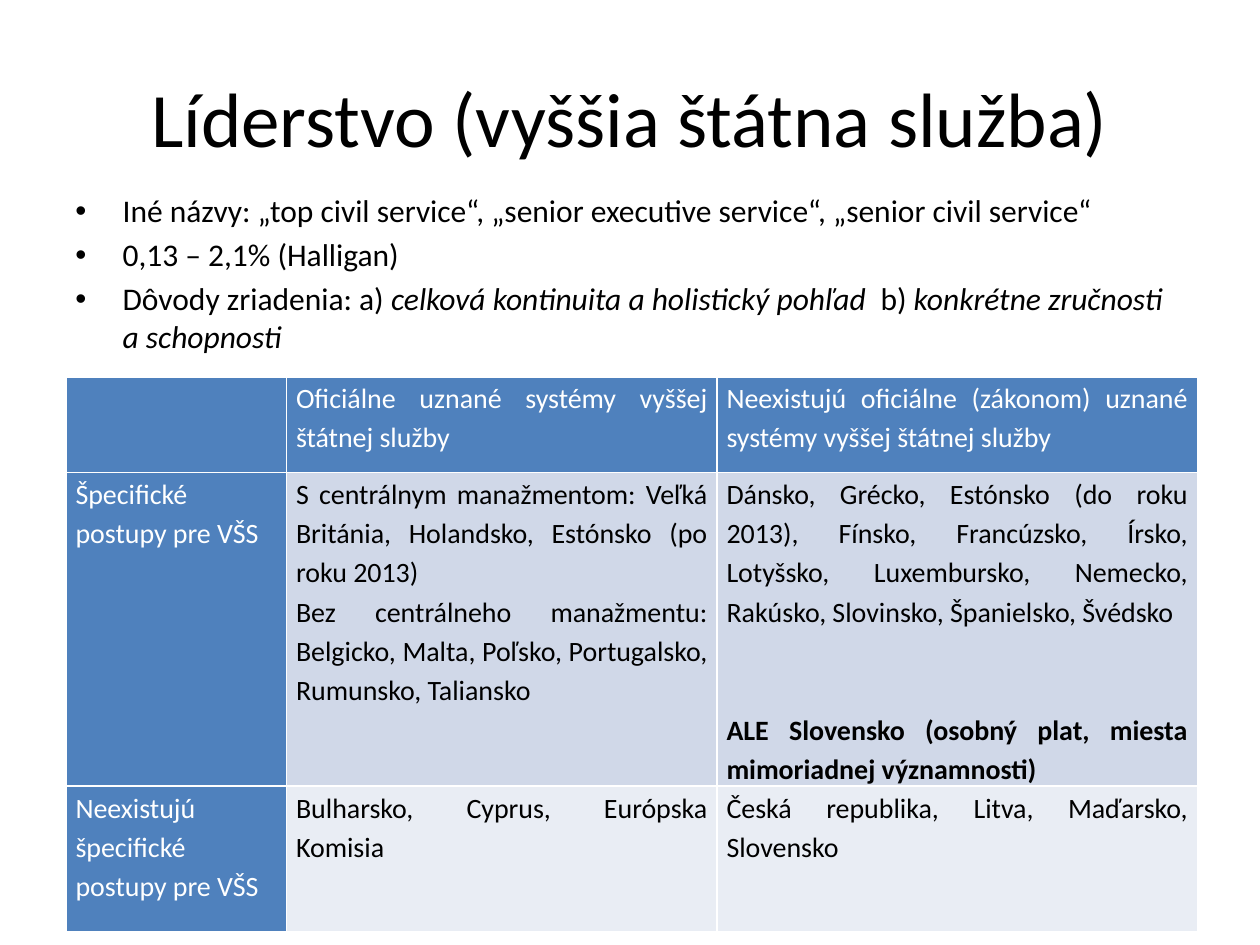
from dataclasses import dataclass

import pptx
import pptx.util
from pptx.dml.color import RGBColor
from pptx.enum.text import MSO_ANCHOR, PP_ALIGN
from pptx.oxml.xmlchemy import OxmlElement

Pt = pptx.util.Pt
COLORS = {"text": "000000", "light": "FFFFFF", "head": "4F81BD",
          "band_dark": "D0D8E8", "band_light": "E9EDF4"}
FONT = "Calibri"
COLUMN_WIDTHS = [126, 246, 274.5]
ROW_HEIGHTS = [54.7, 179.3, 83.3]


@dataclass
class Span:
    text: str
    italic: bool = False


@dataclass
class Line:
    text: str
    bold: bool = False
    space_before: float = 0


BULLETS = [
    [Span("Iné názvy: „top civil service“, „senior executive service“, „senior civil service“")],
    [Span("0,13 – 2,1% (Halligan)")],
    [Span("Dôvody zriadenia: a) "), Span("celková kontinuita a holistický pohľad ", True),
     Span(" b) "), Span("konkrétne zručnosti a schopnosti", True)],
]

ROWS = [
    [[],
     [Line("Oficiálne uznané systémy vyššej štátnej služby")],
     [Line("Neexistujú oficiálne (zákonom) uznané systémy vyššej štátnej služby")]],
    [[Line("Špecifické postupy pre VŠS")],
     [Line("S centrálnym manažmentom: Veľká Británia, Holandsko, Estónsko (po roku 2013)"),
      Line("Bez centrálneho manažmentu: Belgicko, Malta, Poľsko, Portugalsko, "
           "Rumunsko, Taliansko")],
     [Line("Dánsko, Grécko, Estónsko (do roku 2013), Fínsko, Francúzsko, Írsko, Lotyšsko, "
           "Luxembursko, Nemecko, Rakúsko, Slovinsko, Španielsko, Švédsko"),
      Line("ALE Slovensko (osobný plat, miesta mimoriadnej významnosti)", True, 45)]],
    [[Line("Neexistujú špecifické postupy pre VŠS")],
     [Line("Bulharsko, Cyprus, Európska Komisia")],
     [Line("Česká republika, Litva, Maďarsko, Slovensko")]],
]


def set_font(font, size: float, color: str) -> None:
    font.name, font.size = FONT, Pt(size)
    font.color.rgb = RGBColor.from_string(COLORS[color])


def add_text_frame(page, left: float, top: float, width: float, height: float):
    box = page.shapes.add_textbox(Pt(left), Pt(top), Pt(width), Pt(height))
    box.text_frame.word_wrap = True
    return box.text_frame


def next_paragraph(frame, index: int):
    return frame.add_paragraph() if index else frame.paragraphs[0]


def add_bullet(para) -> None:
    properties = para._p.get_or_add_pPr()
    properties.set("marL", str(Pt(27)))
    properties.set("indent", str(-Pt(27)))
    bullet_font = OxmlElement("a:buFont")
    bullet_font.set("typeface", "Arial")
    bullet = OxmlElement("a:buChar")
    bullet.set("char", "•")
    properties.extend([bullet_font, bullet])


def set_borders(cell, color: str, width: float) -> None:
    properties = cell._tc.get_or_add_tcPr()
    for index, side in enumerate(("lnL", "lnR", "lnT", "lnB")):
        border = OxmlElement(f"a:{side}")
        border.set("w", str(Pt(width)))
        fill = OxmlElement("a:solidFill")
        value = OxmlElement("a:srgbClr")
        value.set("val", COLORS[color])
        fill.append(value)
        border.append(fill)
        properties.insert(index, border)


def fill_cell(cell, lines: list[Line], fill: str, color: str, align) -> None:
    cell.fill.solid()
    cell.fill.fore_color.rgb = RGBColor.from_string(COLORS[fill])
    set_borders(cell, "light", 1)
    cell.margin_left = cell.margin_right = Pt(5.4)
    cell.margin_top = cell.margin_bottom = 0
    for index, line in enumerate(lines):
        para = next_paragraph(cell.text_frame, index)
        para.text = line.text
        para.alignment = align
        para.line_spacing = 1.15
        para.space_before = Pt(line.space_before)
        set_font(para.font, 16, color)
        para.font.bold = line.bold


def add_title(page) -> None:
    frame = add_text_frame(page, 36, 21.6, 648, 90)
    frame.vertical_anchor = MSO_ANCHOR.MIDDLE
    para = frame.paragraphs[0]
    para.text = "Líderstvo (vyššia štátna služba)"
    para.alignment = PP_ALIGN.CENTER
    set_font(para.font, 44, "text")


def add_bullets(page) -> None:
    frame = add_text_frame(page, 36, 105.8, 648, 376.6)
    for index, spans in enumerate(BULLETS):
        para = next_paragraph(frame, index)
        para.space_before = Pt(3.6)
        add_bullet(para)
        set_font(para.font, 18, "text")
        for span in spans:
            run = para.add_run()
            run.text = span.text
            run.font.italic = span.italic


def add_service_table(page) -> None:
    table = page.shapes.add_table(
        len(ROWS), len(COLUMN_WIDTHS), Pt(37.8), Pt(215.3),
        Pt(sum(COLUMN_WIDTHS)), Pt(sum(ROW_HEIGHTS))).table
    for column, width in zip(table.columns, COLUMN_WIDTHS):
        column.width = Pt(width)
    for row, height in zip(table.rows, ROW_HEIGHTS):
        row.height = Pt(height)
    bands = ["head", "band_dark", "band_light"]
    for r, cells in enumerate(ROWS):
        for c, lines in enumerate(cells):
            fill = bands[r] if c else "head"
            color = "light" if fill == "head" else "text"
            align = PP_ALIGN.JUSTIFY if c else PP_ALIGN.LEFT
            fill_cell(table.cell(r, c), lines, fill, color, align)


def main() -> None:
    deck = pptx.Presentation()
    deck.slide_width, deck.slide_height = Pt(720), Pt(540)
    page = deck.slides.add_slide(deck.slide_layouts[6])
    add_title(page)
    add_bullets(page)
    add_service_table(page)
    deck.save("out.pptx")


if __name__ == "__main__":
    main()
